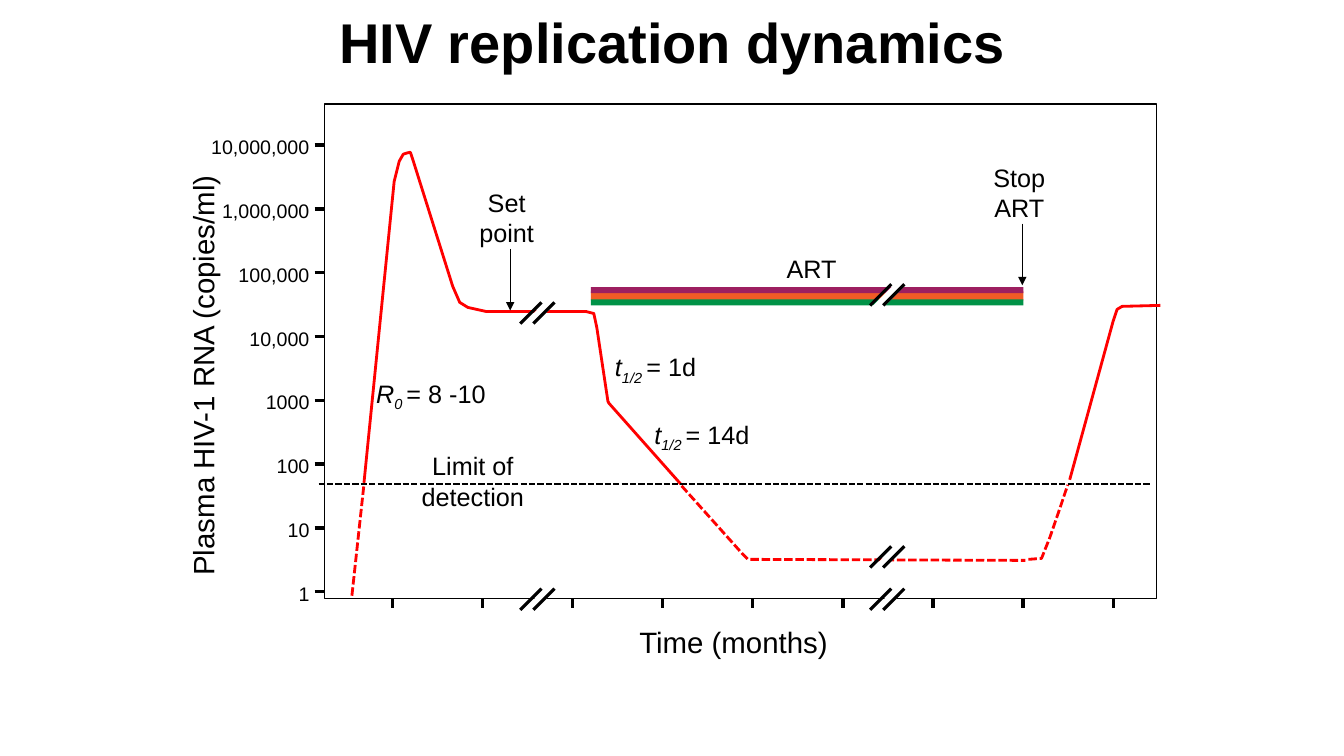
from pptx import Presentation
from pptx.dml.color import RGBColor
from pptx.enum.dml import MSO_LINE
from pptx.enum.shapes import MSO_CONNECTOR, MSO_SHAPE
from pptx.enum.text import PP_ALIGN
from pptx.util import Inches, Pt
from lxml.etree import SubElement
from pptx.oxml.ns import qn

BLACK, WHITE, RED = "000000", "FFFFFF", "FF0000"
WIDE, HIGH = 13.33, 7.5

LEVELS = [("10,000,000", 1), ("1,000,000", 0.9), ("100,000", 0.74), ("10,000", 0.63),
          ("1000", 0.47), ("100", 0.36), ("10", 0.25), ("1", 0.14)]
TOP, ROW, EDGE = 1.44, 0.633, 3.07
LEFT, COL, MONTHS = 3.89, 0.894, 9
PLOT = (3.22, 1.03, 8.25, 4.91)
BASE = PLOT[1] + PLOT[3]
LIMIT = 4.8

DRUGS = [("F15B26", 2.89, 0.09), ("9D1F60", 2.85, 0.06), ("009247", 2.97, 0.06)]
START, STOP = 5.86, 10.15

CURVES = [
    ([(3.49, 5.91), (3.61, 4.8)], True),
    ([(3.61, 4.79), (3.91, 1.8), (3.96, 1.6), (4, 1.53), (4.03, 1.52), (4.07, 1.51),
      (4.1, 1.6), (4.49, 2.84), (4.56, 3), (4.64, 3.05), (4.82, 3.09), (5.82, 3.09)], False),
    ([(5.81, 3.09), (5.89, 3.11), (5.92, 3.25), (6.03, 3.98), (6.04, 4), (6.75, 4.8)], False),
    ([(6.76, 4.82), (7.36, 5.49), (7.42, 5.55), (7.55, 5.55), (10.17, 5.56)], True),
    ([(10.2, 5.55), (10.33, 5.54), (10.41, 5.34), (10.51, 5.05), (10.59, 4.81)], True),
    ([(10.61, 4.76), (11.04, 3.19), (11.08, 3.07), (11.13, 3.04), (11.51, 3.03)], False),
]
BREAKS = [(5.32, 3.14), (5.32, 5.98), (8.79, 2.96), (8.79, 5.98), (8.79, 5.56)]
ARROWS = [(5.06, 2.47), (10.14, 2.22)]
NOTES = [
    (["Limit of", "detection"], (4.16, 4.47, 1.06, 0.61)),
    (["Set", "point"], (4.73, 1.86, 0.59, 0.61)),
    (["Stop", "ART"], (9.83, 1.61, 0.56, 0.61)),
    (["ART"], (7.78, 2.51, 0.54, 0.3)),
]
RATES = [
    ("R", "0 ", "= 8 -10", (3.73, 3.75, 1.15, 0.3)),
    ("t", "1/2 ", "= 1d", (6.1, 3.49, 0.9, 0.3)),
    ("t", "1/2 ", "= 14d", (6.49, 4.16, 1.03, 0.3)),
]

deck = Presentation()
deck.slide_width, deck.slide_height = Inches(WIDE), Inches(HIGH)
slide = deck.slides.add_slide(deck.slide_layouts[6])
shapes = slide.shapes


def paint(code):
    return RGBColor.from_string(code)


def write(lines, box, size=18, bold=False, align=PP_ALIGN.CENTER, pad=(0, 0), turn=0):
    area = shapes.add_textbox(*map(Inches, box))
    area.rotation = turn
    frame = area.text_frame
    frame.word_wrap = False
    frame.margin_left = frame.margin_right = Inches(pad[0])
    frame.margin_top = frame.margin_bottom = Inches(pad[1])
    for rank, line in enumerate(lines):
        para = frame.add_paragraph() if rank else frame.paragraphs[0]
        para.alignment = align
        parts = [(line, False, 0)] if isinstance(line, str) else line
        for words, slant, shift in parts:
            run = para.add_run()
            run.text = words
            font = run.font
            font.name, font.size, font.bold, font.italic = "Arial", Pt(size), bold, slant
            font.color.rgb = paint(BLACK)
            if shift:
                font._element.set("baseline", str(shift))


def ink(line, color, width, dash=False):
    line.color.rgb = paint(color)
    line.width = Pt(width)
    if dash:
        line.dash_style = MSO_LINE.SQUARE_DOT


def rule(start, end, color=BLACK, width=2.38, dash=False, arrow=False):
    link = shapes.add_connector(MSO_CONNECTOR.STRAIGHT, *map(Inches, start + end))
    ink(link.line, color, width, dash)
    if arrow:
        SubElement(link.line._get_or_add_ln(), qn("a:tailEnd"), type="triangle")
    SubElement(link._element.spPr, qn("a:effectLst"))


def block(box, fill=None):
    rect = shapes.add_shape(MSO_SHAPE.RECTANGLE, *map(Inches, box))
    rect.shadow.inherit = False
    if fill:
        rect.fill.solid()
        rect.fill.fore_color.rgb = paint(fill)
        rect.line.fill.background()
    else:
        rect.fill.background()
        ink(rect.line, BLACK, 1.13)


def trace(points, dash):
    spots = [(Inches(x), Inches(y)) for x, y in points]
    pen = shapes.build_freeform(*spots[0])
    pen.add_line_segments(spots[1:], close=False)
    curve = pen.convert_to_shape()
    curve.shadow.inherit = False
    curve.fill.background()
    ink(curve.line, RED, 2, dash)


def gap(x, y):
    rule((x + 0.2, y - 0.2), (x - 0.2, y + 0.2), WHITE, 6)
    for side in (0.18, 0.05):
        rule((x + side, y - 0.14), (x + side - 0.21, y + 0.07), width=2.25)


def main():
    write(["HIV replication dynamics"], (2.94, 0.03, 7.45, 0.77), size=40, bold=True, pad=(0.1, 0.05))
    for rank, (label, width) in enumerate(LEVELS):
        y = TOP + rank * ROW
        rule((3.12, y), (3.21, y))
        write([label], (EDGE - width, y - 0.1, width, 0.24), size=14, align=PP_ALIGN.RIGHT)
    block(PLOT)
    for rank in range(MONTHS):
        x = LEFT + rank * COL
        rule((x, BASE + 0.09), (x, BASE))
    for color, y, height in DRUGS:
        block((START, y, STOP - START, height), color)
    for points, dash in CURVES:
        trace(points, dash)
    rule((3.16, LIMIT), (11.42, LIMIT), width=1.5, dash=True)
    for x, y in ARROWS:
        rule((x, y), (x, y + 0.61), width=0.75, arrow=True)
    for x, y in BREAKS:
        gap(x, y)
    for lines, box in NOTES:
        write(lines, box)
    for sign, index, value, box in RATES:
        write([[(sign, True, 0), (index, True, -25000), (value, False, 0)]], box, align=PP_ALIGN.LEFT)
    write(["Time (months)"], (6.31, 6.19, 1.93, 0.35), size=21)
    write(["Plasma HIV-1 RNA (copies/ml)"], (0.01, 3.55, 4, 0.35), size=21, turn=270)
    deck.save("out.pptx")


if __name__ == "__main__":
    main()
